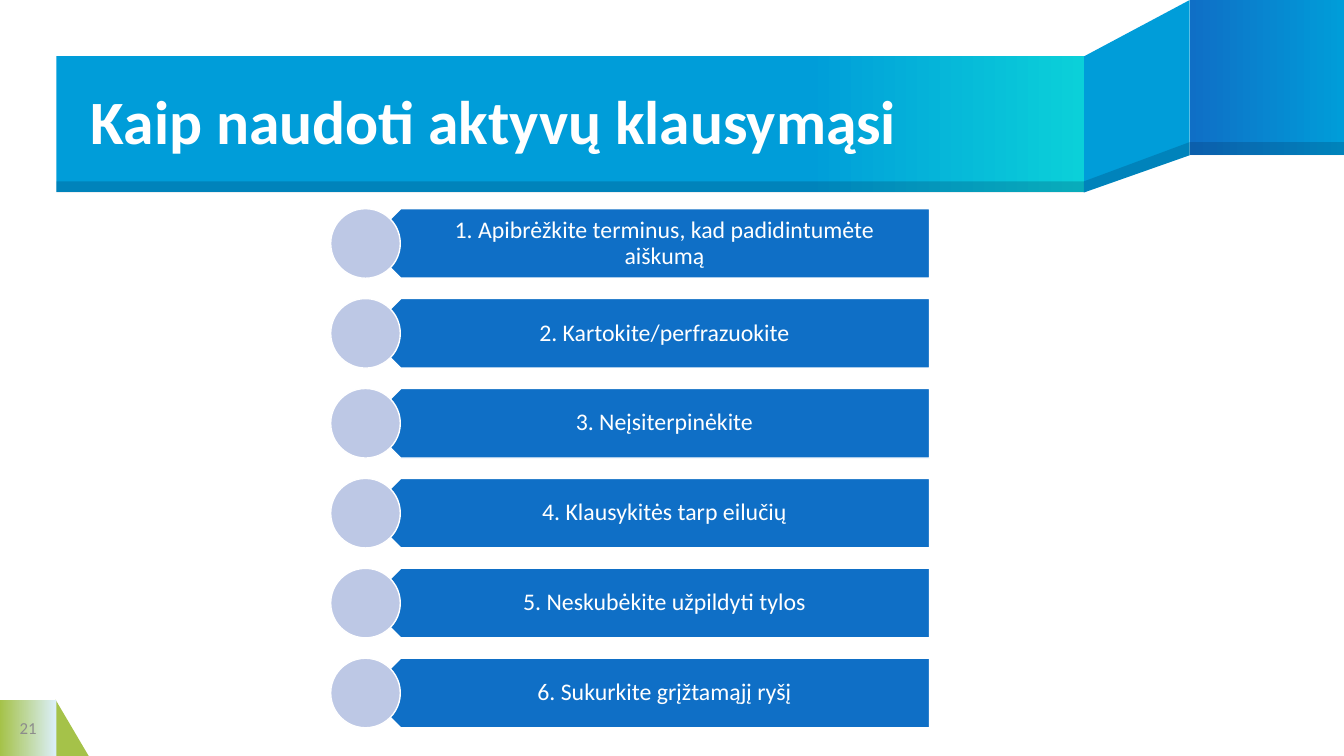
from lxml import etree
from pptx import Presentation
from pptx.dml.color import RGBColor
from pptx.enum.shapes import MSO_SHAPE
from pptx.enum.text import MSO_ANCHOR, PP_ALIGN
from pptx.oxml.ns import qn
from pptx.util import Inches, Pt

RECT, OVAL = MSO_SHAPE.RECTANGLE, MSO_SHAPE.OVAL
PENTAGON, TRIANGLE = MSO_SHAPE.PENTAGON, MSO_SHAPE.RIGHT_TRIANGLE
MIDDLE = MSO_ANCHOR.MIDDLE
LEFT, CENTER = PP_ALIGN.LEFT, PP_ALIGN.CENTER

WHITE = RGBColor(0xFF, 0xFF, 0xFF)
BLUE = RGBColor(0x0F, 0x6F, 0xC6)
SKY = RGBColor(0x00, 0x9D, 0xD9)
TURQUOISE = RGBColor(0x0B, 0xD0, 0xD9)
NAVY = RGBColor(0x00, 0x1F, 0x46)
GREEN = RGBColor(0xA5, 0xC2, 0x49)
PALE = RGBColor(0xDB, 0xEF, 0xF9)
LAVENDER = RGBColor(0xBD, 0xC8, 0xE5)
GRAY = RGBColor(0x8C, 0x8C, 0x8C)

STEPS = [
    "1. Apibrėžkite terminus, kad padidintumėte aiškumą",
    "2. Kartokite/perfrazuokite",
    "3. Neįsiterpinėkite",
    "4. Klausykitės tarp eilučių",
    "5. Neskubėkite užpildyti tylos",
    "6. Sukurkite grįžtamąjį ryšį",
]
FIRST_TOP, LAST_TOP, STEP_HEIGHT = 2.07, 6.53, 0.69


class SlideBuilder:
    font = "Calibri"

    def __init__(self, slide):
        self.slide = slide

    def paint(self, sp, color, alpha=None, outline=None):
        sp.shadow.inherit = False
        sp.fill.solid()
        sp.fill.fore_color.rgb = color
        if alpha is not None:
            clr = sp.fill._xPr.find(qn("a:solidFill"))[0]
            etree.SubElement(clr, qn("a:alpha")).set("val", str(alpha * 1000))
        if outline is None:
            sp.line.fill.background()
        else:
            sp.line.color.rgb = outline
            sp.line.width = Pt(1)
        return sp

    def shape(self, kind, x, y, w, h, color, **style):
        sp = self.slide.shapes.add_shape(
            kind, Inches(x), Inches(y), Inches(w), Inches(h))
        return self.paint(sp, color, **style)

    def gradient(self, x, y, w, h, start, end, start_at=0):
        """Rectangle blending left to right, solid up to start_at."""
        sp = self.shape(RECT, x, y, w, h, start)
        sp.fill.gradient()
        sp.fill.gradient_angle = 0
        stops = sp.fill.gradient_stops
        for stop, color, position in zip(stops, (start, end), (start_at, 1)):
            stop.color.rgb = color
            stop.position = position

    def polygon(self, points, color, **style):
        corners = [(Inches(x), Inches(y)) for x, y in points]
        builder = self.slide.shapes.build_freeform(*corners[0])
        builder.add_line_segments(corners[1:])
        self.paint(builder.convert_to_shape(), color, **style)

    def text(self, x, y, w, h, text, size, color=WHITE, align=CENTER,
             bold=False, spacing=None, insets=(0, 0, 0, 0)):
        tb = self.slide.shapes.add_textbox(
            Inches(x), Inches(y), Inches(w), Inches(h))
        tf = tb.text_frame
        tf.word_wrap = True
        tf.vertical_anchor = MIDDLE
        (tf.margin_left, tf.margin_top,
         tf.margin_right, tf.margin_bottom) = map(Inches, insets)
        tf.text = text
        p = tf.paragraphs[0]
        p.alignment = align
        p.line_spacing = spacing
        font = p.runs[0].font
        font.name, font.size, font.bold = self.font, Pt(size), bold
        font.color.rgb = color

    def step(self, y, label):
        arrow = self.shape(PENTAGON, 3.63, y, 5.59, STEP_HEIGHT, BLUE,
                           outline=WHITE)
        arrow.rotation = 180
        self.text(3.8, y, 5.41, STEP_HEIGHT, label, 17, spacing=0.9,
                  insets=(0.3, 0.07, 0.13, 0.07))
        self.shape(OVAL, 3.28, y, STEP_HEIGHT, STEP_HEIGHT, LAVENDER,
                   outline=WHITE)


def main():
    prs = Presentation()
    prs.slide_width, prs.slide_height = Inches(13.33), Inches(7.5)
    s = SlideBuilder(prs.slides.add_slide(prs.slide_layouts[6]))

    # Page number corner
    s.shape(TRIANGLE, 0.55, 6.94, 0.33, 0.56, GREEN)
    s.gradient(0, 6.94, 0.56, 0.56, GREEN, PALE)

    # Folded title ribbon with its darker lower edge
    s.polygon([(11.8, 0), (10.75, 0.56), (10.75, 1.91), (11.8, 1.54)], SKY)
    s.gradient(11.8, 0, 1.53, 1.54, BLUE, SKY)
    s.gradient(0.56, 0.56, 10.19, 1.35, SKY, TURQUOISE, start_at=0.73)
    s.polygon([(11.8, 1.41), (10.75, 1.8), (10.75, 1.91), (11.8, 1.54)],
              NAVY, alpha=20)
    s.shape(RECT, 11.8, 1.41, 1.53, 0.13, NAVY, alpha=20)
    s.shape(RECT, 0.56, 1.8, 10.19, 0.11, NAVY, alpha=20)

    s.text(0.9, 0.57, 9.85, 1.34, "Kaip naudoti aktyvų klausymąsi", 44,
           align=LEFT, bold=True, spacing=0.9)
    s.text(0, 6.94, 0.56, 0.56, "21", 12, color=GRAY)

    pitch = (LAST_TOP - FIRST_TOP) / (len(STEPS) - 1)
    for i, label in enumerate(STEPS):
        s.step(FIRST_TOP + i * pitch, label)

    prs.save("out.pptx")


if __name__ == "__main__":
    main()
